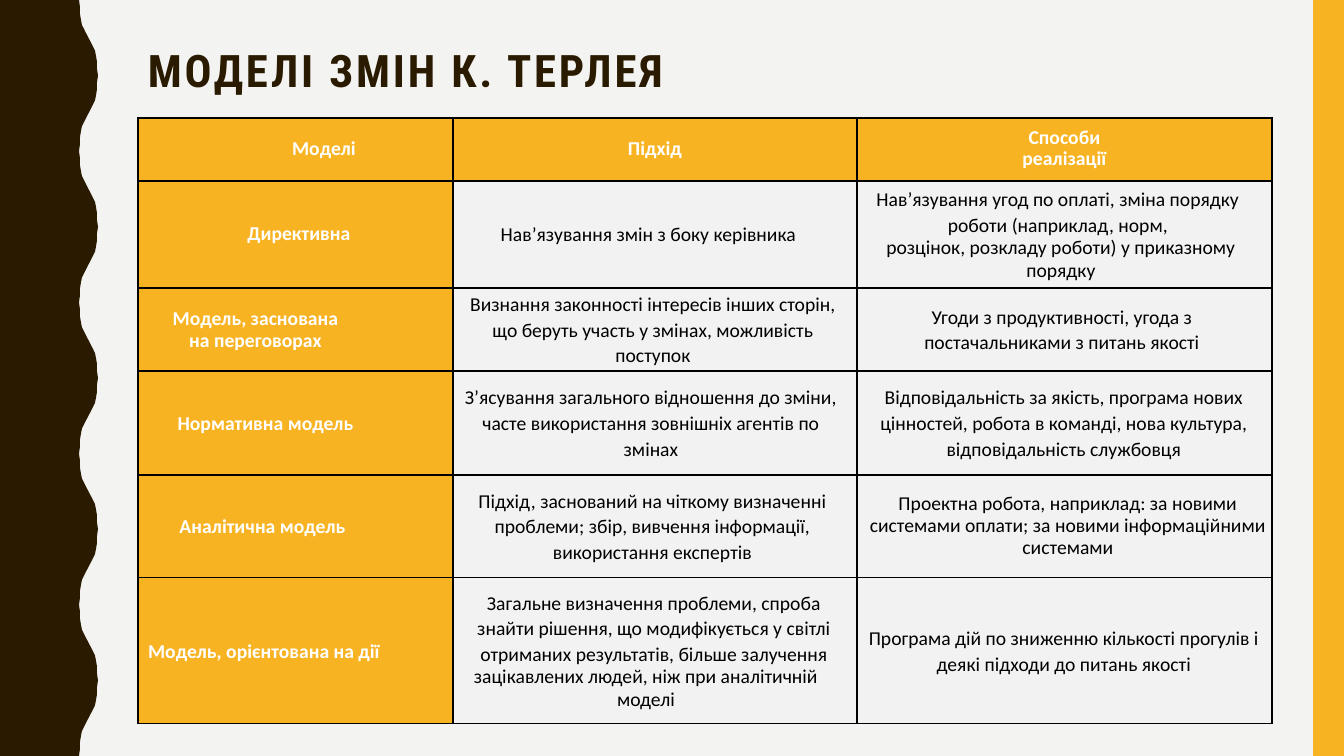
from pptx import Presentation
from pptx import util as u
from pptx.dml.color import RGBColor
from pptx.enum import shapes, text
from pptx.oxml import parse_xml
from pptx.oxml.ns import nsdecls

WIDE, HIGH = 1344, 756
UNIT = 12192000 / WIDE
GOLD, DARK, PALE, PAGE = "F8B323", "2A1A00", "F2F2F2", "F3F3F2"
BLACK, WHITE = "000000", "FFFFFF"
COLS = [315, 404, 415]
ROWS = [63, 107, 83, 104, 103, 146]
BEND = [(0, 0), (1, 7), (1, 14), (2, 20), (3, 25), (5, 29), (7, 33)]
EXACT, TALL = u.Pt(15.8), u.Pt(16.1)
LOOSE = 1.07

# fmt: off
CELLS = [
    [[("Моделі", 57, 0, EXACT)],
     [("Підхід", 92, 92, EXACT)],
     [("Способи", 77, 77, EXACT), ("реалізації", 77, 77, u.Pt(15.2))]],
    [[("Директивна", 7, 0, EXACT)],
     [("Нав’язування змін з боку керівника", 8, 21, 1.0)],
     [("Нав’язування угод по оплаті, зміна порядку роботи (наприклад, норм,", 7, 20, LOOSE),
      ("розцінок, розкладу роботи) у приказному порядку", 7, 14, TALL)]],
    [[("Модель, заснована", 7, 87, 1.0), ("на переговорах", 7, 87, EXACT)],
     [("Визнання законності інтересів інших сторін, що беруть участь у змінах, "
       "можливість поступок", 8, 12, LOOSE)],
     [("Угоди з продуктивності, угода з постачальниками з питань якості", 7, 12, LOOSE)]],
    [[("Нормативна модель", 7, 67, LOOSE)],
     [("З’ясування загального відношення до зміни, часте використання "
       "зовнішніх агентів по змінах", 8, 16, LOOSE)],
     [("Відповідальність за якість, програма нових цінностей, робота в команді, "
       "нова культура, відповідальність службовця", 7, 8, LOOSE)]],
    [[("Аналітична модель", 7, 73, LOOSE)],
     [("Підхід, заснований на чіткому визначенні проблеми; збір, вивчення "
       "інформації, використання експертів", 8, 13, LOOSE)],
     [("Проектна робота, наприклад: за новими системами оплати; за новими "
       "інформаційними системами", 7, 0, EXACT)]],
    [[("Модель, орієнтована на дії", 7, 70, LOOSE)],
     [("Загальне визначення проблеми, спроба знайти рішення, що модифікується у світлі "
       "отриманих результатів, більше залучення", 8, 10, LOOSE),
      ("зацікавлених людей, ніж при аналітичній моделі", 8, 26, TALL)],
     [("Програма дій по зниженню кількості прогулів і деякі підходи до питань якості",
       7, 8, LOOSE)]],
]
# fmt: on


def px(n):
    return u.Emu(round(n * UNIT))


def tint(code):
    return RGBColor.from_string(code)


def paint(shape, code):
    shape.shadow.inherit = False
    shape.fill.solid()
    shape.fill.fore_color.rgb = tint(code)
    shape.line.fill.background()


def style(para, font, size, code):
    para.font.name = font
    para.font.size = u.Pt(size)
    para.font.color.rgb = tint(code)


def add_wave(slide, x, y, w, h, deep=19, count=10):
    half = h / count
    arc = BEND + [(deep / 2, half / 2)]
    arc += [(deep - a, half - b) for a, b in reversed(BEND)]
    edge = x + w - deep
    points = [(edge, y)]
    for i in range(count):
        for a, b in arc[1:]:
            points.append((edge + (deep - a if i % 2 else a), y + i * half + b))
    points.append((x, y + h))
    form = slide.shapes.build_freeform(px(x), px(y), scale=1.0)
    form.add_line_segments([(px(a), px(b)) for a, b in points], close=True)
    paint(form.convert_to_shape(), DARK)


def add_bar(slide, x, y, w, h):
    box = [px(n) for n in (x, y, w, h)]
    paint(slide.shapes.add_shape(shapes.MSO_SHAPE.RECTANGLE, *box), GOLD)


def add_title(slide, x, y, w, h):
    frame = slide.shapes.add_textbox(px(x), px(y), px(w), px(h)).text_frame
    frame.word_wrap = True
    frame.vertical_anchor = text.MSO_ANCHOR.MIDDLE
    para = frame.paragraphs[0]
    run = para.add_run()
    run.text = "МОДЕЛІ ЗМІН К. ТЕРЛЕЯ"
    run._r.get_or_add_rPr().set("spc", "200")
    para.line_spacing = 0.9
    style(para, "Roboto Condensed", 32, DARK)
    para.font.bold = True


def add_rules(cell):
    props = cell._tc.get_or_add_tcPr()
    for side in "LRTB":
        props.append(parse_xml(
            f'<a:ln{side} {nsdecls("a")} w="12700"><a:solidFill>'
            f'<a:srgbClr val="{BLACK}"/></a:solidFill></a:ln{side}>'))


def fill_cell(cell, lines, head):
    add_rules(cell)
    cell.fill.solid()
    cell.fill.fore_color.rgb = tint(GOLD if head else PALE)
    cell.vertical_anchor = text.MSO_ANCHOR.MIDDLE
    cell.margin_left = cell.margin_right = 0
    cell.margin_top = cell.margin_bottom = 0
    frame = cell.text_frame
    for i, (words, left, right, gap) in enumerate(lines):
        para = frame.add_paragraph() if i else frame.paragraphs[0]
        para.text = words
        para.alignment = text.PP_ALIGN.CENTER
        para.line_spacing = gap
        style(para, "Calibri", 14, WHITE if head else BLACK)
        para.font.bold = head
        props = para._p.get_or_add_pPr()
        props.set("marL", str(px(left)))
        props.set("marR", str(px(right)))
        props.set("indent", "0")


def add_grid(slide, x, y):
    box = [px(n) for n in (x, y, sum(COLS), sum(ROWS))]
    table = slide.shapes.add_table(len(ROWS), len(COLS), *box).table
    table.horz_banding = False
    for col, wide in zip(table.columns, COLS):
        col.width = px(wide)
    for r, (row, high) in enumerate(zip(table.rows, ROWS)):
        row.height = px(high)
        for c, lines in enumerate(CELLS[r]):
            fill_cell(table.cell(r, c), lines, r == 0 or c == 0)


def main():
    deck = Presentation()
    deck.slide_width, deck.slide_height = px(WIDE), px(HIGH)
    slide = deck.slides.add_slide(deck.slide_layouts[6])
    slide.background.fill.solid()
    slide.background.fill.fore_color.rgb = tint(PAGE)
    add_wave(slide, 0, 0, 98, HIGH)
    add_bar(slide, 1313, 0, 31, HIGH)
    add_title(slide, 138, 42, 1122, 61)
    add_grid(slide, 138, 118)
    deck.save("out.pptx")


if __name__ == "__main__":
    main()
